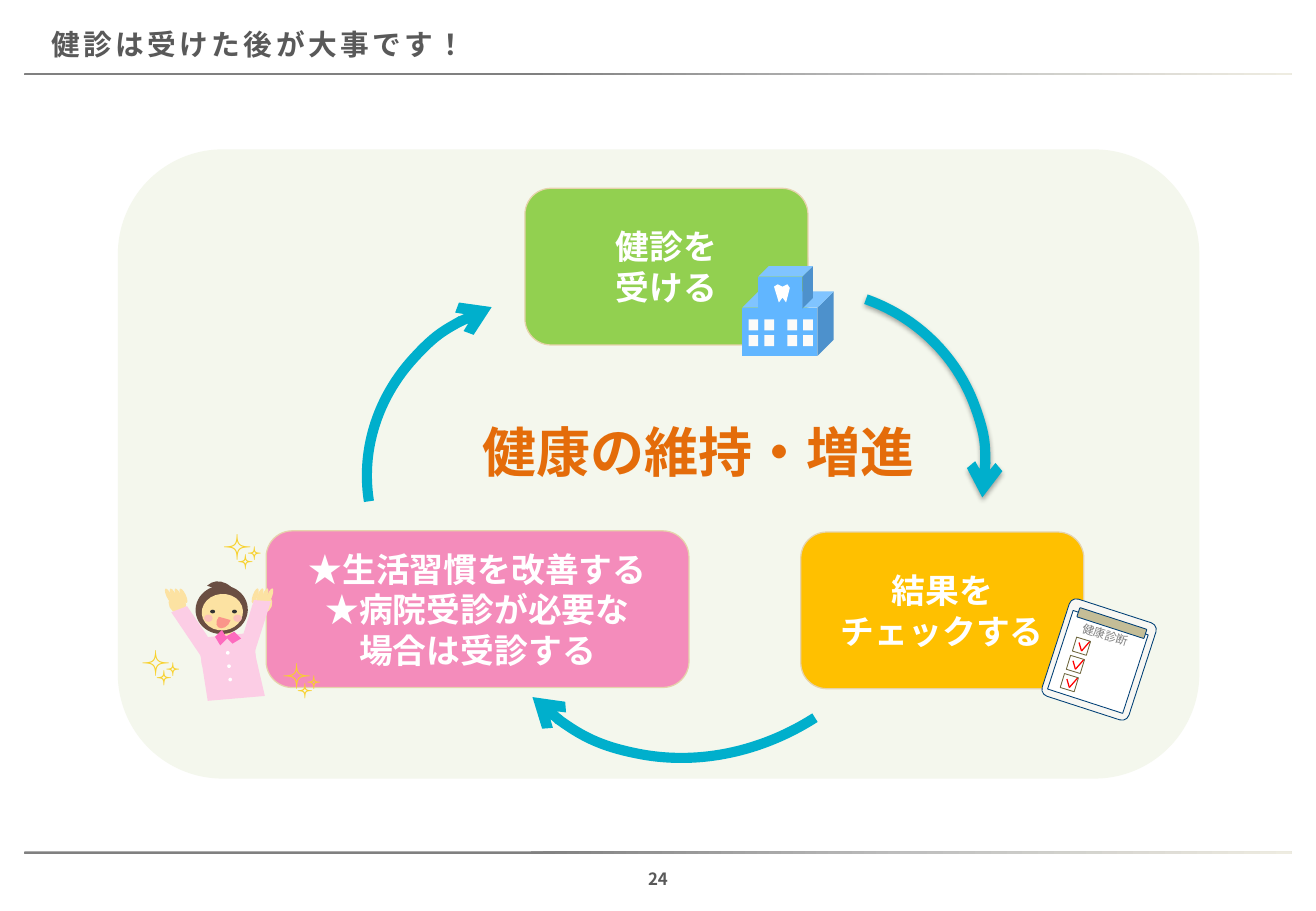
"""Build the health check cycle slide."""
from lxml.etree import SubElement
from pptx import Presentation
from pptx.dml.color import RGBColor
from pptx.enum.shapes import MSO_CONNECTOR, MSO_SHAPE as S
from pptx.enum.text import MSO_ANCHOR, PP_ALIGN as AL
from pptx.oxml.ns import qn
from pptx.util import Pt

PX = 9144
GOTHIC = "Noto Sans CJK JP"
rgb = RGBColor.from_string

prs = Presentation()
prs.slide_width, prs.slide_height = 1083 * PX, 750 * PX
s = prs.slides.add_slide(prs.slide_layouts[5])


def draw(kind, geom, fill=None, line=None, weight=0.75, rot=0):
    if kind == "outline":
        fb = s.shapes.build_freeform(*geom[0], scale=float(PX))
        fb.add_line_segments(geom[1:], close=True)
        sp = fb.convert_to_shape()
    else:
        sp = s.shapes.add_shape(kind, *[v * PX for v in geom])
    sp.shadow.inherit = False
    sp.rotation = rot
    if fill:
        sp.fill.solid()
        sp.fill.fore_color.rgb = rgb(fill)
    else:
        sp.fill.background()
    if line:
        sp.line.color.rgb = rgb(line)
        sp.line.width = Pt(weight)
    else:
        sp.line.fill.background()
    return sp


def write(sp, text, size, color, bold=True, font="Calibri", align=AL.CENTER,
          anchor=MSO_ANCHOR.MIDDLE, wrap=True, spacing=0):
    tf = sp.text_frame
    tf.word_wrap = wrap
    tf.vertical_anchor = anchor
    for i, words in enumerate(text.split("\n")):
        p = tf.add_paragraph() if i else tf.paragraphs[0]
        p.alignment = align
        r = p.add_run()
        r.text = words
        r.font.size, r.font.bold, r.font.name = Pt(size), bold, font
        r.font.color.rgb = rgb(color)
        rPr = r.font._element
        rPr.set("lang", "ja-JP")
        rPr.set("spc", str(spacing * 100))
        SubElement(rPr, qn("a:ea")).set("typeface", font)
    return tf


for top in (60, 701):
    sp = draw(S.ROUNDED_RECTANGLE, (20, top, 1043, 2))
    sp.fill.gradient()
    sp.fill.gradient_angle = 0
    stops = sp.element.spPr.find(".//" + qn("a:gsLst"))
    stops.clear()
    for pos, color in ((0, "808080"), (40, "808080"), (70, "BFBFBF"), (100, "EEECE1")):
        gs = SubElement(stops, qn("a:gs"), pos=str(pos * 1000))
        SubElement(gs, qn("a:srgbClr"), val=color)

title = s.shapes.title
title.left, title.top, title.width, title.height = [v * PX for v in (14, 13, 1055, 47)]
tf = write(title, "健診は受けた後が大事です！", 17, "595959", font=GOTHIC, align=AL.JUSTIFY, spacing=2)
tf.margin_left, tf.margin_right, tf.margin_top, tf.margin_bottom = 28 * PX, 0, 0, 0

number = s.shapes.add_textbox(*[v * PX for v in (415, 707, 253, 33)])
tf = write(number, "24", 10, "595959", font=GOTHIC)
tf.margin_left = tf.margin_right = tf.margin_top = tf.margin_bottom = 0

draw(S.ROUNDED_RECTANGLE, (97, 123, 890, 518), "F4F7ED")
cards = [
    ("結果を\nチェックする", 659, 438, 233, "FFC000"),
    ("★生活習慣を改善する\n★病院受診が必要な\n場合は受診する", 219, 437, 348, "F48CBB"),
    ("健診を\n受ける", 432, 155, 233, "92D050"),
]
for text, left, top, width, color in cards:
    card = draw(S.ROUNDED_RECTANGLE, (left, top, width, 129), color, "E6D3AC")
    write(card, text, 20, "FFFFFF")

goal = s.shapes.add_textbox(*[v * PX for v in (387, 340, 414, 64)])
write(goal, "健康の維持・増進", 32, "E46C0A", align=AL.LEFT, anchor=MSO_ANCHOR.TOP)

arrows = [
    ((310, 236, 282, 300), 250.8, 167.36, 0),
    ((380, 252, 402, 361), 133.7, 172.07, 0.95),
    ((517, 238, 294, 288), 10.8, 167.36, 0),
]
for box, rot, start, end in arrows:
    sp = draw(S.ARC, box, line="00AFCC", weight=6, rot=rot)
    sp.adjustments[0], sp.adjustments[1] = start, end
    SubElement(sp.line._get_or_add_ln(), qn("a:tailEnd"), type="arrow")
effects = sp.element.spPr.find(qn("a:effectLst"))
shadow = SubElement(effects, qn("a:outerShdw"), blurRad=str(Pt(3.1)), dist=str(Pt(1.8)),
                    dir="5400000", rotWithShape="0")
SubElement(SubElement(shadow, qn("a:srgbClr"), val="000000"), qn("a:alpha"), val="35000")

draw(S.CUBE, (611, 240, 75, 53), "61B6FF")
draw(S.CUBE, (624, 219, 45, 35), "61B6FF")
draw("outline", [(637, 236), (640, 234), (644, 236), (648, 234), (650, 237), (647, 249),
                 (644, 245), (641, 249)], "FFFFFF")
for top in (263, 276):
    for left in (616, 629, 648, 661):
        draw(S.RECTANGLE, (left, top, 8, 9), "FCFBF9")

board = draw(S.ROUNDED_RECTANGLE, (867, 501, 75, 84), "F8F7F3", "003F75", 0.5, 18)
draw(S.RECTANGLE, (871, 511, 65, 68), "FFFFFF", "003F75", 0.5, 18)
clip = draw(S.ROUNDED_RECTANGLE, (886, 509, 58, 8), "C4BD97", "003F75", 0.5, 18)
board.adjustments[0] = clip.adjustments[0] = 0.08
for i in range(3):
    left, top = 884 - 5 * i, 526 + 15 * i
    for dx, dy in ((4, 3), (13, 2)):
        ends = (left + dx, top + dy, left + 6, top + 10)
        tick = s.shapes.add_connector(MSO_CONNECTOR.STRAIGHT, *[v * PX for v in ends])
        tick.line.color.rgb = rgb("FF0000")
        tick.line.width = Pt(0.75)
        SubElement(tick._element.spPr, qn("a:effectLst"))
    draw(S.RECTANGLE, (left, top, 12, 12), line="706840", weight=0.5, rot=17)
label = s.shapes.add_textbox(*[v * PX for v in (880, 513, 68, 22)])
label.rotation = 17
write(label, "健康診断", 7, "808080", False, GOTHIC, AL.LEFT, MSO_ANCHOR.TOP)

SKIN, HAIR, PINK = "FCE2A2", "6A4E42", "FCCDE5"
for palm, turn in ((146, -25), (217, 20)):
    draw(S.OVAL, (palm - 7, 489, 14, 16), SKIN, rot=turn)
    for i in range(4):
        draw(S.OVAL, (palm - 9 + 4 * i, 484, 4, 13), SKIN, rot=turn)
draw("outline", [(165, 539), (171, 577), (218, 573), (209, 534)], PINK)
draw(S.CAN, (181, 516, 10, 15), SKIN, rot=354.5)
draw(S.OVAL, (161, 482, 43, 40), HAIR, rot=355)
draw(S.OVAL, (166, 489, 34, 30), SKIN, rot=355)
draw(S.CHORD, (163, 482, 38, 30), HAIR, rot=65).adjustments[0] = 100
for side in (-1, 1):
    draw(S.OVAL, (182 + 9 * side, 502, 4, 3), "333333")
    draw(S.OVAL, (180 + 12 * side, 506, 7, 6), "FCC0BA")
draw(S.CHORD, (177, 506, 14, 10), "FA958A", rot=-50)
draw(S.ROUNDED_RECTANGLE, (165, 523, 45, 26), PINK, rot=354.5)
draw("outline", [(200, 523), (209, 494), (223, 495), (208, 542)], PINK)
draw("outline", [(171, 524), (154, 499), (141, 504), (168, 544)], PINK)
for side in (-1, 1):
    draw(S.PARALLELOGRAM, (182 + 5 * side, 521, 10, 8), "FD6BBE", rot=45 * side)
for i in range(3):
    draw(S.OVAL, (186 + i, 536 + 11 * i, 3, 3), "FFFFFF")

for left, top in ((173, 426), (222, 532), (106, 521)):
    sparkle = s.shapes.add_textbox(left * PX, top * PX, 56 * PX, 50 * PX)
    write(sparkle, "✨", 24, "F8D12C", False, align=AL.LEFT, anchor=MSO_ANCHOR.TOP, wrap=False)

prs.save("out.pptx")
